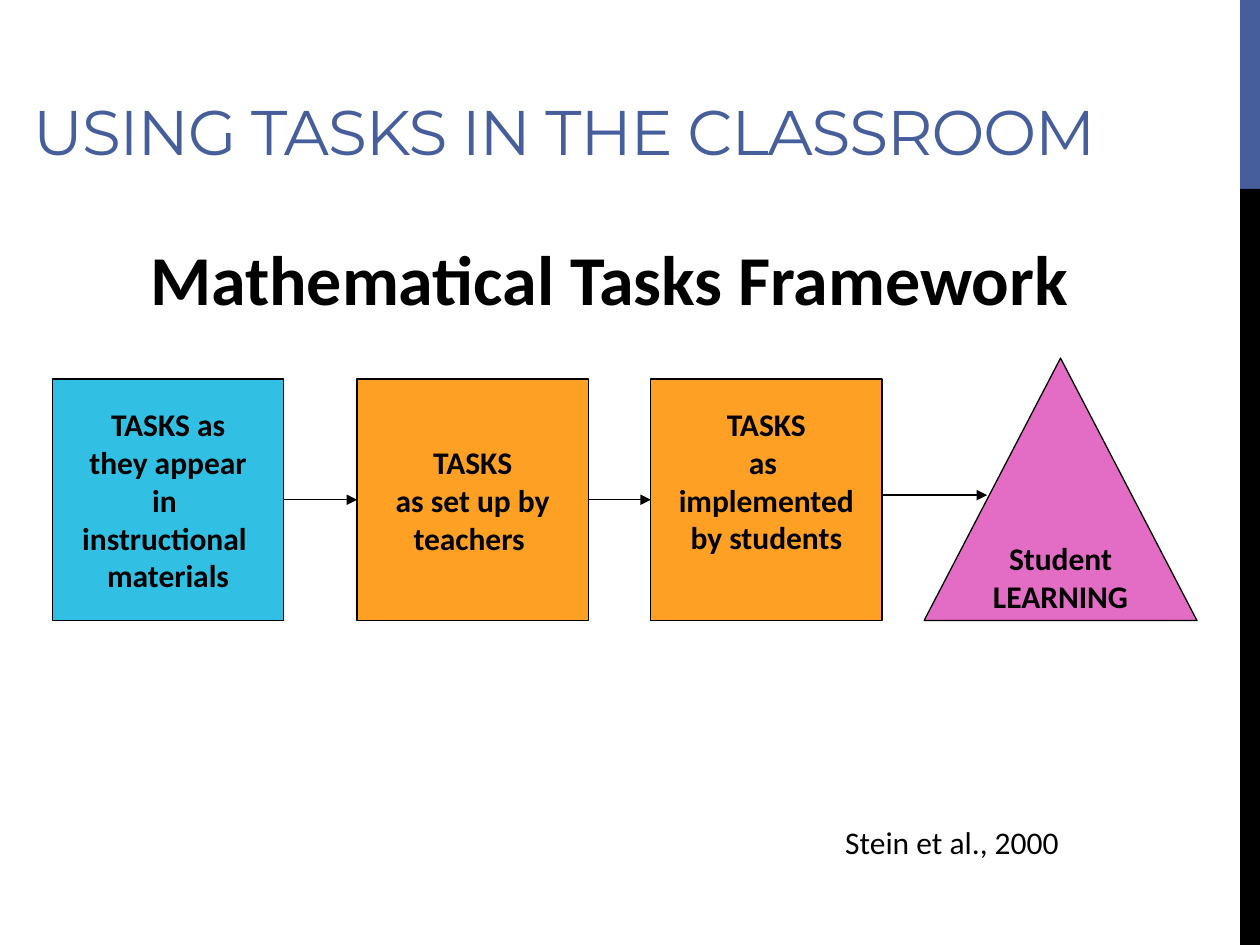
from pptx import Presentation
from pptx.dml.color import RGBColor as RGB
from pptx.enum.shapes import MSO_CONNECTOR as Conn, MSO_SHAPE as Kind
from pptx.enum.text import MSO_ANCHOR as Anchor, PP_ALIGN as Align
from pptx.oxml.ns import qn
from pptx.util import Cm, Pt
from lxml.etree import SubElement as Sub

COLORS = {
    "title": "465E9C",
    "ink": "000000",
    "blue": "31BFE3",
    "orange": "FDA023",
    "pink": "E36CC5",
}


class Deck:
    font = "Calibri"
    size = 18
    line = 0.75

    def __init__(self, wide, high):
        self.prs = Presentation()
        self.prs.slide_width, self.prs.slide_height = Cm(wide), Cm(high)
        self.slide = self.prs.slides.add_slide(self.prs.slide_layouts[6])

    def color(self, name):
        return RGB.from_string(COLORS[name])

    def style(self, shape, text, size=None, bold=False, font=None,
              color="ink", align=Align.LEFT, anchor=Anchor.TOP, wrap=False):
        frame = shape.text_frame
        frame.text = text
        frame.word_wrap = wrap
        frame.vertical_anchor = anchor
        for para in frame.paragraphs:
            para.alignment = align
            for run in para.runs:
                run.font.name = font or self.font
                run.font.size = Pt(size or self.size)
                run.font.bold = bold
                run.font.color.rgb = self.color(color)
        return frame

    def shape(self, kind, x, y, w, h, fill, edge=True):
        item = self.slide.shapes.add_shape(kind, Cm(x), Cm(y), Cm(w), Cm(h))
        item.shadow.inherit = False
        item.fill.solid()
        item.fill.fore_color.rgb = self.color(fill)
        if edge:
            item.line.color.rgb = self.color("ink")
            item.line.width = Pt(self.line)
        else:
            item.line.fill.background()
        return item

    def stage(self, kind, x, y, w, h, fill, text, anchor=Anchor.MIDDLE):
        item = self.shape(kind, x, y, w, h, fill)
        self.style(item, text, bold=True, align=Align.CENTER, anchor=anchor)
        return item

    def label(self, x, y, w, h, text, **look):
        box = self.slide.shapes.add_textbox(Cm(x), Cm(y), Cm(w), Cm(h))
        return self.style(box, text, **look)

    def arrow(self, x1, x2, y):
        link = self.slide.shapes.add_connector(
            Conn.STRAIGHT, Cm(x1), Cm(y), Cm(x2), Cm(y))
        link.line.color.rgb = self.color("ink")
        link.line.width = Pt(self.line)
        props = link._element.spPr
        Sub(props.find(qn("a:ln")), qn("a:tailEnd"), type="triangle")
        Sub(props, qn("a:effectLst"))
        return link

    def join(self, left, right):
        link = self.arrow(0, 1, 0)
        link.begin_connect(left, 3)
        link.end_connect(right, 1)


deck = Deck(25.4, 19.05)

# Side bar
deck.shape(Kind.RECTANGLE, 25, 0, 0.4, 3.81, "title", edge=False)
deck.shape(Kind.RECTANGLE, 25, 3.81, 0.4, 15.24, "ink", edge=False)

# Title and heading
title = deck.label(0.42, -0.3, 24.5, 3.81, "USING TASKS IN THE CLASSROOM",
                   size=36, font="Montserrat", color="title",
                   anchor=Anchor.BOTTOM, wrap=True)
title.paragraphs[0].runs[0].font._element.set("spc", "-60")
deck.label(1.48, 4.63, 21.6, 1.96, "Mathematical Tasks Framework",
           size=40, bold=True, align=Align.CENTER, wrap=True)

# Task stages
SIDE, TOP, HIGH = 4.66, 7.64, 4.87
STAGES = [
    (1.06, "blue", "TASKS as\nthey appear\nin \ninstructional \nmaterials"),
    (7.2, "orange", "TASKS\nas set up by\nteachers "),
    (13.12, "orange", "TASKS\nas \nimplemented\nby students"),
]
boxes = [deck.stage(Kind.RECTANGLE, x, TOP, SIDE, HIGH, fill, text)
         for x, fill, text in STAGES]
boxes[-1].text_frame.margin_bottom = Cm(0.9)

# Outcome
deck.stage(Kind.ISOSCELES_TRIANGLE, 18.63, 7.22, 5.5, 5.29, "pink",
           "Student\nLEARNING", anchor=Anchor.BOTTOM)

# Arrows
for left, right in zip(boxes, boxes[1:]):
    deck.join(left, right)
deck.arrow(STAGES[-1][0] + SIDE, 19.9, 9.98)

# Citation
deck.label(16.79, 16.46, 4.88, 1.02, "Stein et al., 2000")

deck.prs.save("out.pptx")
